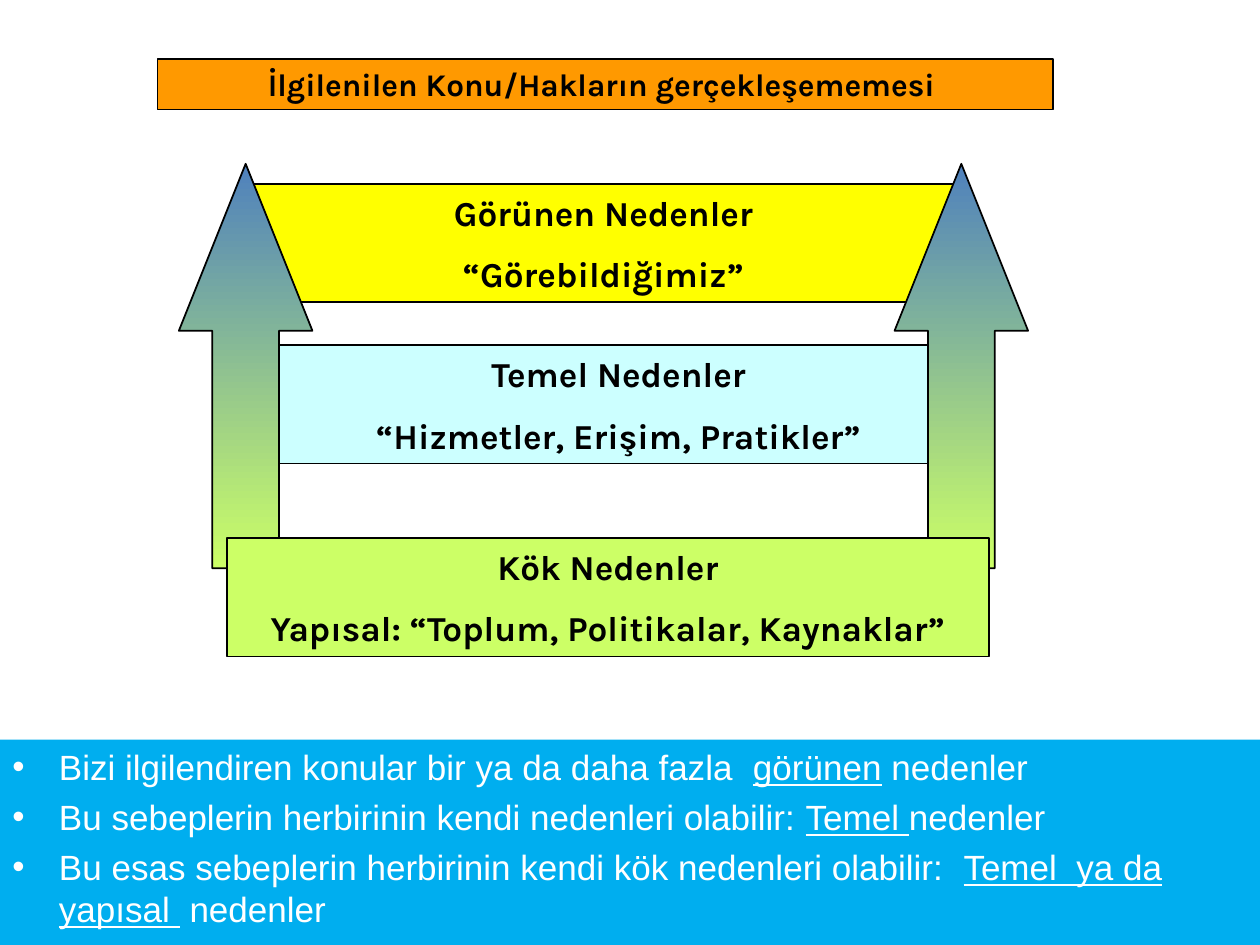
from dataclasses import dataclass

from lxml import etree
from pptx import Presentation
from pptx.dml.color import RGBColor
from pptx.enum.shapes import MSO_SHAPE
from pptx.enum.text import MSO_ANCHOR, PP_ALIGN
from pptx.oxml.ns import qn
from pptx.util import Inches, Pt

RECT, UP_ARROW = MSO_SHAPE.RECTANGLE, MSO_SHAPE.UP_ARROW
TOP, MIDDLE = MSO_ANCHOR.TOP, MSO_ANCHOR.MIDDLE
LEFT, CENTER = PP_ALIGN.LEFT, PP_ALIGN.CENTER

BLACK = RGBColor(0x00, 0x00, 0x00)
WHITE = RGBColor(0xFF, 0xFF, 0xFF)
SKY = RGBColor(0x00, 0xAE, 0xEF)
ORANGE = RGBColor(0xFF, 0x99, 0x00)
YELLOW = RGBColor(0xFF, 0xFF, 0x00)
CYAN = RGBColor(0xCC, 0xFF, 0xFF)
LIME = RGBColor(0xCC, 0xFF, 0x66)
BLUE = RGBColor(0x4F, 0x81, 0xBD)

COLS, ROWS = 100, 75
CAUSE_H = 9.4
ARROW_Y, ARROW_W, ARROW_H = 13, 10.6, 32.1

NOTES = [
    [("Bizi ilgilendiren konular bir ya da daha fazla  ", False),
     ("görünen", True), (" nedenler", False)],
    [("Bu sebeplerin herbirinin kendi nedenleri olabilir: ", False),
     ("Temel ", True), ("nedenler", False)],
    [("Bu esas sebeplerin herbirinin kendi kök nedenleri olabilir:  ", False),
     ("Temel  ya da yapısal ", True), (" nedenler", False)],
]


@dataclass
class CauseSlide:
    """Draws the cause diagram on one slide, with lengths in grid columns and rows."""
    prs: object
    s: object
    label_font: str = "Karla"
    note_font: str = "Arial"
    indent: float = 0.37

    def shape(self, kind, x, y, w, h, line=BLACK):
        dx, dy = self.prs.slide_width / COLS, self.prs.slide_height / ROWS
        sp = self.s.shapes.add_shape(
            kind, round(x * dx), round(y * dy), round(w * dx), round(h * dy))
        sp.shadow.inherit = False
        if line is None:
            sp.line.fill.background()
        else:
            sp.line.color.rgb = line
            sp.line.width = Pt(1)
        return sp

    def box(self, x, y, w, h, color, anchor, line=BLACK):
        sp = self.shape(RECT, x, y, w, h, line)
        sp.fill.solid()
        sp.fill.fore_color.rgb = color
        tf = sp.text_frame
        tf.word_wrap = True
        tf.vertical_anchor = anchor
        return tf

    def paragraph(self, tf, i, align, before):
        p = tf.add_paragraph() if i else tf.paragraphs[0]
        p.alignment = align
        p.space_before = Pt(before)
        return p

    def run(self, p, text, font, size, color, bold=False, underline=False):
        r = p.add_run()
        r.text = text
        f = r.font
        f.name, f.size, f.bold, f.underline = font, Pt(size), bold, underline
        f.color.rgb = color

    def label(self, x, y, w, h, color, lines, size=20):
        tf = self.box(x, y, w, h, color, MIDDLE)
        for i, text in enumerate(lines):
            p = self.paragraph(tf, i, CENTER, 11 if i else 0)
            self.run(p, text, self.label_font, size, BLACK, bold=True)

    def arrow(self, x):
        sp = self.shape(UP_ARROW, x, ARROW_Y, ARROW_W, ARROW_H)
        sp.adjustments[0], sp.adjustments[1] = 0.5, 1.25
        sp.fill.gradient()
        sp.fill.gradient_angle = 270
        for stop, color, at in zip(sp.fill.gradient_stops, (BLUE, LIME), (0, 1)):
            stop.color.rgb = color
            stop.position = at

    def notes(self, x, y, w, h, items):
        tf = self.box(x, y, w, h, SKY, TOP, line=None)
        for i, runs in enumerate(items):
            p = self.paragraph(tf, i, LEFT, 4.6)
            pPr = p._p.get_or_add_pPr()
            pPr.set("marL", str(Inches(self.indent)))
            pPr.set("indent", str(-Inches(self.indent)))
            etree.SubElement(pPr, qn("a:buFont"), typeface=self.note_font)
            etree.SubElement(pPr, qn("a:buChar"), char="•")
            for text, underline in runs:
                self.run(p, text, self.note_font, 20, WHITE, underline=underline)


def main():
    prs = Presentation()
    prs.slide_width, prs.slide_height = Inches(10), Inches(7.5)
    slide = CauseSlide(prs, prs.slides.add_slide(prs.slide_layouts[6]))
    slide.notes(0, 58.7, COLS, ROWS - 58.7, NOTES)
    slide.label(20.4, 27.4, 57.4, CAUSE_H, CYAN,
                ["Temel Nedenler", "“Hizmetler, Erişim, Pratikler”"])
    slide.label(12.5, 4.7, 71.1, 4, ORANGE,
                ["İlgilenilen Konu/Hakların gerçekleşememesi "], size=18)
    slide.label(19.6, 14.6, 56.6, CAUSE_H, YELLOW,
                ["Görünen Nedenler", "“Görebildiğimiz”"])
    for x in (14.2, 71):
        slide.arrow(x)
    slide.label(18, 42.7, 60.5, CAUSE_H, LIME,
                ["Kök Nedenler", "Yapısal: “Toplum, Politikalar, Kaynaklar”"])
    prs.save("out.pptx")


if __name__ == "__main__":
    main()
